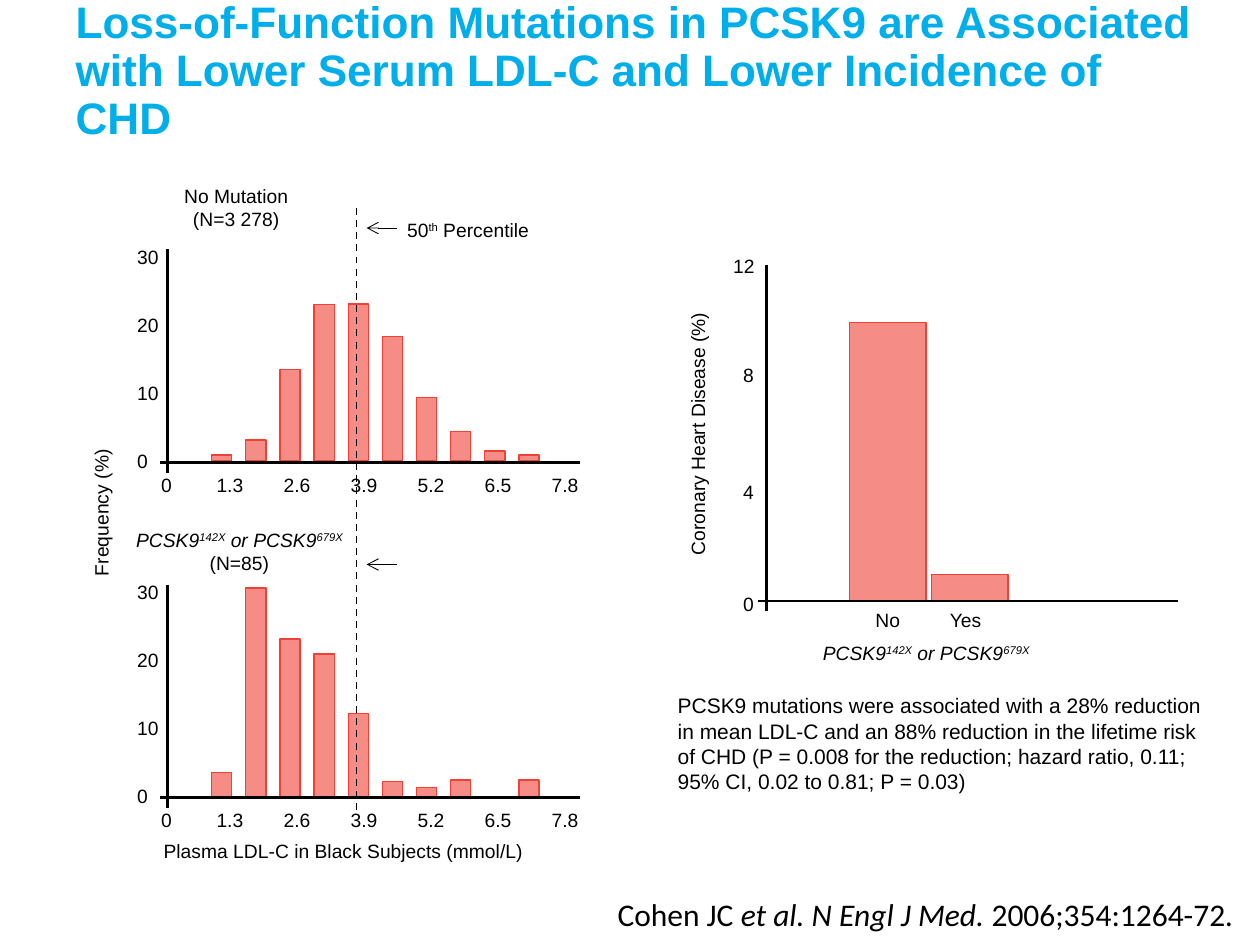
from lxml import etree
from pptx import Presentation
from pptx import util as u
from pptx.dml.color import RGBColor
from pptx.enum import dml, shapes, text
from pptx.oxml import ns

COLORS = {"title": "00AEEA", "ink": "000000", "bar": "EF4136"}
ALIGN = {"left": text.PP_ALIGN.LEFT, "center": text.PP_ALIGN.CENTER,
         "right": text.PP_ALIGN.RIGHT}
COLUMNS, ROWS = 100, 75
LABEL_HEIGHT = 2.9
LABEL_WIDTHS = {1: 2.9, 2: 3.7, 3: 4.2}  # by number of characters


class SlideBuilder:
    """Holds the style and the slide; lengths are grid columns and rows."""

    def __init__(self, presentation):
        self.slide = presentation.slides.add_slide(presentation.slide_layouts[1])
        self.column = presentation.slide_width / COLUMNS
        self.row = presentation.slide_height / ROWS

    def x(self, columns):
        return u.Emu(round(columns * self.column))

    def y(self, rows):
        return u.Emu(round(rows * self.row))

    def box(self, left, top, width, height):
        return self.x(left), self.y(top), self.x(width), self.y(height)

    def add_child(self, parent, tag, **attributes):
        return etree.SubElement(parent, ns.qn(tag), attributes)

    def fill_paragraph(self, paragraph, content, size, font="Arial", color="ink",
                       bold=None, align="left"):
        """Content is a string, or (text, style) runs; styles: i, sup."""
        if isinstance(content, str):
            paragraph.text = content
        else:
            for words, style in content:
                run = paragraph.add_run()
                run.text = words
                if "i" in style.split():
                    run.font.italic = True
                if "sup" in style.split():
                    run.font._element.set("baseline", "30000")
        paragraph.alignment = ALIGN[align]
        paragraph.font.size = u.Pt(size)
        paragraph.font.name = font
        paragraph.font.bold = bold
        paragraph.font.color.rgb = RGBColor.from_string(COLORS[color])

    def placeholder(self, index, content, box, **style):
        shape = self.slide.placeholders[index]
        shape.left, shape.top, shape.width, shape.height = self.box(*box)
        frame = shape.text_frame
        frame.auto_size = text.MSO_AUTO_SIZE.NONE
        frame.vertical_anchor = text.MSO_ANCHOR.BOTTOM
        paragraph = frame.paragraphs[0]
        self.fill_paragraph(paragraph, content, **style)
        paragraph.space_before = u.Pt(0)
        return paragraph

    def label(self, paragraphs, box, size=11, align="left", wrap=False, rotation=0):
        shape = self.slide.shapes.add_textbox(*self.box(*box))
        shape.rotation = rotation
        frame = shape.text_frame
        frame.word_wrap = wrap
        frame.auto_size = text.MSO_AUTO_SIZE.SHAPE_TO_FIT_TEXT
        for number, content in enumerate(paragraphs):
            paragraph = frame.add_paragraph() if number else frame.paragraphs[0]
            self.fill_paragraph(paragraph, content, size, align=align)

    def tick(self, words, middle, left=None, right=None, center=None):
        """A one-line axis label, placed by one edge or by its centre."""
        width = LABEL_WIDTHS[len(words)]
        if right is not None:
            left = right - width
        elif center is not None:
            left = center - width / 2
        self.label([words], (left, middle - LABEL_HEIGHT / 2, width, LABEL_HEIGHT))

    def bar(self, left, base, width, height):
        shape = self.slide.shapes.add_shape(
            shapes.MSO_SHAPE.RECTANGLE, *self.box(left, base - height, width, height))
        shape.shadow.inherit = False
        color = RGBColor.from_string(COLORS["bar"])
        shape.fill.solid()
        shape.fill.fore_color.rgb = color
        fill = shape._element.spPr.find(ns.qn("a:solidFill"))
        self.add_child(fill[0], "a:alpha", val="60000")
        shape.line.color.rgb = color
        shape.line.width = u.Pt(0.75)

    def line(self, start, end, width, parent=None, dashed=False, arrow=False):
        connector = (parent or self.slide).shapes.add_connector(
            shapes.MSO_CONNECTOR.STRAIGHT, self.x(start[0]), self.y(start[1]),
            self.x(end[0]), self.y(end[1]))
        connector.line.color.rgb = RGBColor.from_string(COLORS["ink"])
        connector.line.width = u.Pt(width)
        if dashed:
            connector.line.dash_style = dml.MSO_LINE.DASH
        if arrow:
            outline = connector._element.spPr.find(ns.qn("a:ln"))
            self.add_child(outline, "a:tailEnd", type="arrow")
        self.add_child(connector._element.spPr, "a:effectLst")

    def axes(self, left, baseline, top, bottom, axis_x):
        group = self.slide.shapes.add_group_shape()
        self.line((left, baseline), (left + 33.3, baseline), 1.5, group)
        self.line((axis_x, top), (axis_x, bottom), 1.5, group)

    def histogram(self, baseline, values):
        rows_per_percent = 0.54
        base = baseline - 0.1
        for percent in (30, 20, 10, 0):
            self.tick(str(percent), base - percent * rows_per_percent, left=9.9)
        for number, value in enumerate(values):
            if value:
                self.bar(16.8 + 2.71 * number, base, 1.6, value * rows_per_percent)
        self.axes(12.7, baseline, baseline - 16.9, baseline + 0.8, 13.3)
        self.tick("0", baseline + 1.8, center=13.25)
        for number in range(6):
            self.tick(f"{1.3 * (number + 1):.1f}", baseline + 1.8,
                      center=18.3 + 5.32 * number)


def main():
    presentation = Presentation()
    presentation.slide_width, presentation.slide_height = u.Inches(10), u.Inches(7.5)
    builder = SlideBuilder(presentation)
    mutations = [("PCSK9", "i"), ("142X", "i sup"), (" or PCSK9", "i"), ("679X", "i sup")]

    # Title and citation
    title = builder.placeholder(
        0, "Loss-of-Function Mutations in PCSK9 are Associated with Lower Serum "
        "LDL-C and Lower Incidence of CHD", (5, 1.5, 91.5, 10.4),
        size=25.2, color="title", bold=True)
    title.line_spacing = 0.9
    citation = builder.placeholder(
        1, [("Cohen JC ", ""), ("et al. N Engl J Med. ", "i"),
            ("2006;354:1264-72", ""), (".", "i")],
        (9, 70, 89.9, 4.5), size=18, font="Calibri", align="right")
    properties = citation._p.get_or_add_pPr()
    properties.set("marL", "0")
    properties.set("indent", "0")
    bullet = etree.Element(ns.qn("a:buNone"))
    properties.find(ns.qn("a:defRPr")).addprevious(bullet)

    # LDL-C histograms without and with the mutations
    builder.histogram(36.7, [0.9, 3.1, 13.5, 23, 23.1, 18.3, 9.4, 4.4, 1.5, 0.9])
    builder.histogram(63.3, [3.5, 30.6, 23.1, 20.9, 12.2, 2.2, 1.3, 2.4, 0, 2.4])
    builder.label(["No Mutation\v(N=3 278)"], (13.6, 14.1, 10.3, 4.7), align="center")
    builder.label([mutations, "(N=85)"], (9.4, 41.4, 19.2, 4.7), align="center")
    builder.label(["Frequency (%)"], (2, 39.2, 12.1, LABEL_HEIGHT), rotation=270)
    builder.label(["Plasma LDL-C in Black Subjects (mmol/L)"],
                  (12, 66.1, 31.9, LABEL_HEIGHT))

    # 50th percentile marker
    builder.line((28.3, 16.5), (28.3, 64.5), 1, dashed=True)
    builder.label([[("50", ""), ("th", "sup"), (" Percentile", "")]],
                  (31.2, 16.8, 11.9, LABEL_HEIGHT), align="center")
    for middle in (18.1, 44.8):
        builder.line((31.5, middle), (29.1, middle), 0.5, arrow=True)

    # Coronary heart disease bars
    for words, middle in zip(("12", "8", "4", "0"), (21.15, 29.75, 39.05, 47.95)):
        builder.tick(words, middle, right=60.9)
    for name, left, height, label_left, label_width in (
            ("No", 67.4, 22.1, 68.5, 4), ("Yes", 73.9, 2.1, 74.4, 4.7)):
        builder.bar(left, 47.7, 6.1, height)
        builder.label([name], (label_left, 47.8, label_width, LABEL_HEIGHT))
    builder.axes(60.2, 47.7, 21, 48.5, 60.85)
    builder.label([mutations], (63.9, 50.4, 19.2, LABEL_HEIGHT), align="center")
    builder.label(["Coronary Heart Disease (%)"],
                  (44.7, 32.9, 21.4, LABEL_HEIGHT), rotation=270)

    # Finding
    builder.label(
        ["PCSK9 mutations were associated with a 28% reduction in mean LDL-C and an "
         "88% reduction in the lifetime risk of CHD (P = 0.008 for the reduction; "
         "hazard ratio, 0.11; 95% CI, 0.02 to 0.81; P = 0.03)"],
        (52.8, 54.5, 44.9, 9.1), size=12, wrap=True)

    presentation.save("out.pptx")


if __name__ == "__main__":
    main()
